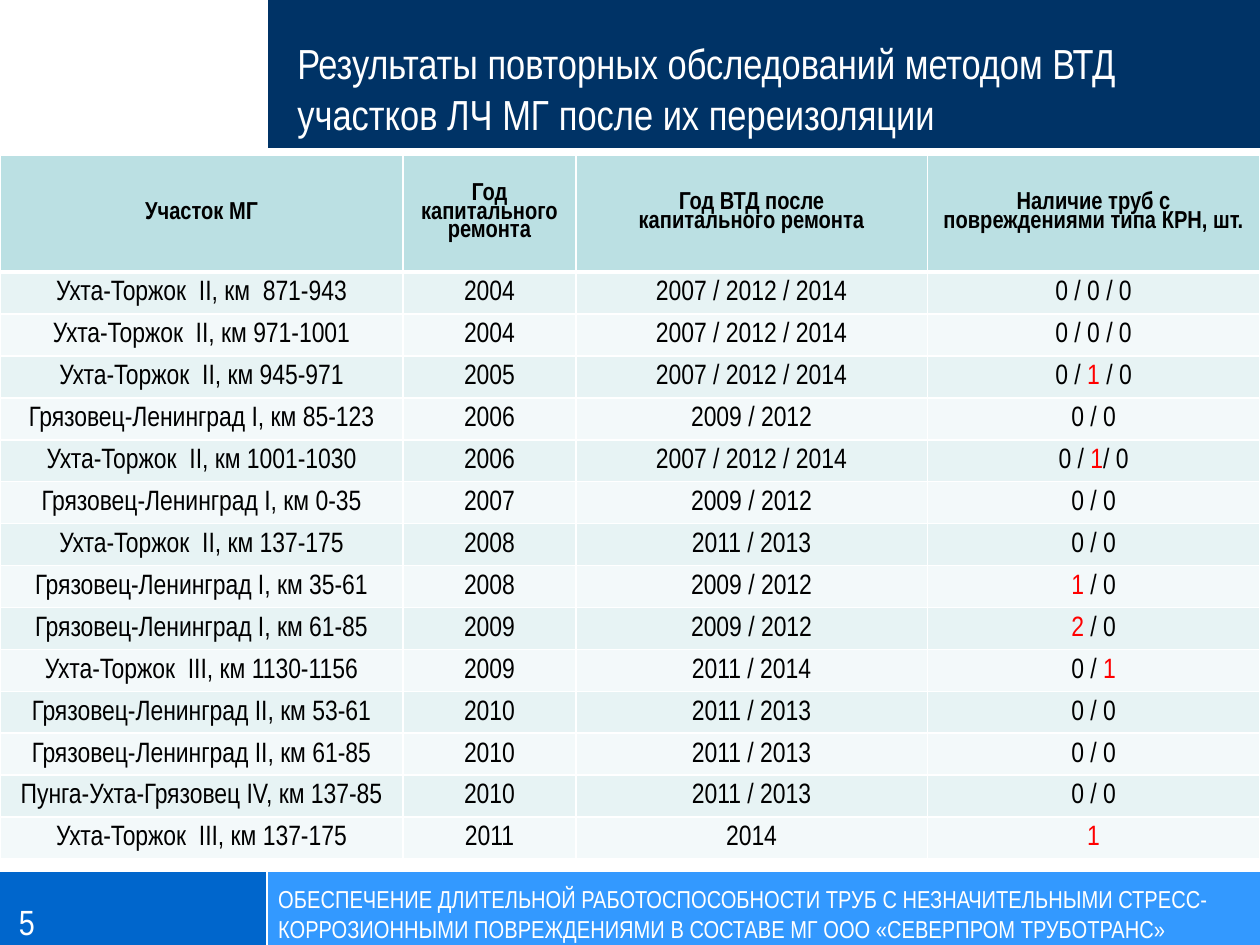
from itertools import groupby

from lxml.etree import SubElement
from pptx import Presentation
from pptx.dml.color import RGBColor
from pptx.enum.shapes import MSO_CONNECTOR, MSO_SHAPE
from pptx.enum.text import MSO_ANCHOR as ANCHOR, MSO_AUTO_SIZE as AUTO_SIZE, PP_ALIGN as ALIGN
from pptx.oxml.ns import qn
from pptx.util import Inches, Pt

WHITE = RGBColor(0xFF, 0xFF, 0xFF)
BLACK = RGBColor(0x00, 0x00, 0x00)
RED = RGBColor(0xFF, 0x00, 0x00)
NAVY = RGBColor(0x00, 0x33, 0x66)
BLUE = RGBColor(0x00, 0x66, 0xCC)
SKY = RGBColor(0x33, 0x99, 0xFF)
TEAL = RGBColor(0xBB, 0xE0, 0xE3)
BANDS = (RGBColor(0xE7, 0xF3, 0xF4), RGBColor(0xF3, 0xF9, 0xFA))

WIDTH, HEIGHT = 10, 7.5
SPLIT = 2.12
HEADER_BOTTOM = 1.18
FOOTER_TOP = 6.91

COLUMN_WIDTHS = (3.2, 1.37, 2.79, 2.64)
HEADER_HEIGHT, ROW_HEIGHT = 0.93, 0.333
HEADINGS = (
    "Участок МГ",
    "Год капитального ремонта",
    "Год ВТД после\nкапитального ремонта",
    "Наличие труб с повреждениями типа КРН, шт.",
)
SECTIONS = (
    ("Ухта-Торжок  II, км  871-943", "2004", "2007 / 2012 / 2014", "0 / 0 / 0"),
    ("Ухта-Торжок  II, км 971-1001", "2004", "2007 / 2012 / 2014", "0 / 0 / 0"),
    ("Ухта-Торжок  II, км 945-971", "2005", "2007 / 2012 / 2014", "0 / 1 / 0"),
    ("Грязовец-Ленинград I, км 85-123", "2006", "2009 / 2012", "0 / 0"),
    ("Ухта-Торжок  II, км 1001-1030", "2006", "2007 / 2012 / 2014", "0 / 1/ 0"),
    ("Грязовец-Ленинград I, км 0-35", "2007", "2009 / 2012", "0 / 0"),
    ("Ухта-Торжок  II, км 137-175", "2008", "2011 / 2013", "0 / 0"),
    ("Грязовец-Ленинград I, км 35-61", "2008", "2009 / 2012", "1 / 0"),
    ("Грязовец-Ленинград I, км 61-85", "2009", "2009 / 2012", "2 / 0"),
    ("Ухта-Торжок  III, км 1130-1156", "2009", "2011 / 2014", "0 / 1"),
    ("Грязовец-Ленинград II, км 53-61", "2010", "2011 / 2013", "0 / 0"),
    ("Грязовец-Ленинград II, км 61-85", "2010", "2011 / 2013", "0 / 0"),
    ("Пунга-Ухта-Грязовец IV, км 137-85", "2010", "2011 / 2013", "0 / 0"),
    ("Ухта-Торжок  III, км 137-175", "2011", "2014", "1"),
)


class SlideBuilder:
    """Holds the text style and the slide being filled."""

    font_name = "Arial Narrow"

    def __init__(self, slide):
        self.slide = slide

    def band(self, left, top, width, height, color):
        band = self.slide.shapes.add_shape(
            MSO_SHAPE.RECTANGLE, *map(Inches, (left, top, width, height)))
        band.shadow.inherit = False
        band.fill.solid()
        band.fill.fore_color.rgb = color
        band.line.fill.background()

    def rule(self, x1, y1, x2, y2):
        rule = self.slide.shapes.add_connector(
            MSO_CONNECTOR.STRAIGHT, *map(Inches, (x1, y1, x2, y2)))
        rule.line.color.rgb = WHITE
        rule.line.width = Pt(1.25)
        SubElement(rule.element.spPr, qn("a:effectLst"))

    def run(self, paragraph, text, size, color, bold=False):
        run = paragraph.add_run()
        run.text = text
        style = {"name": self.font_name, "size": Pt(size), "bold": bold}
        for attribute, value in style.items():
            setattr(run.font, attribute, value)
        run.font.color.rgb = color

    def fill_frame(self, frame, text, size, anchor, inset):
        settings = {
            "word_wrap": True, "auto_size": AUTO_SIZE.NONE, "vertical_anchor": anchor,
            "margin_left": Inches(inset), "margin_right": Inches(inset),
            "margin_top": Inches(inset / 2), "margin_bottom": Inches(inset / 2),
        }
        for attribute, value in settings.items():
            setattr(frame, attribute, value)
        paragraph = frame.paragraphs[0]
        paragraph.alignment = ALIGN.LEFT
        self.run(paragraph, text, size, WHITE)

    def title(self, left, top, width, height, text):
        title = self.slide.shapes.title
        title.left, title.top, title.width, title.height = map(
            Inches, (left, top, width, height))
        self.fill_frame(title.text_frame, text, 24, ANCHOR.BOTTOM, 0)
        # Bring the title in front of the bands
        title.element.getparent().append(title.element)

    def label(self, left, top, width, height, text, size, anchor, inset):
        box = self.slide.shapes.add_textbox(*map(Inches, (left, top, width, height)))
        self.fill_frame(box.text_frame, text, size, anchor, inset)

    def cell(self, cell, fill, margins, top_border=1, bottom_border=1):
        borders = {"lnL": 1, "lnR": 1, "lnT": top_border, "lnB": bottom_border}
        properties = cell._tc.get_or_add_tcPr()
        for side, points in borders.items():
            border = SubElement(properties, qn(f"a:{side}"), w=str(Pt(points)))
            solid = SubElement(border, qn("a:solidFill"))
            SubElement(solid, qn("a:srgbClr"), val=str(WHITE))
        cell.fill.solid()
        cell.fill.fore_color.rgb = fill
        cell.vertical_anchor = ANCHOR.MIDDLE
        for side, margin in zip(("left", "top", "right", "bottom"), margins):
            setattr(cell, f"margin_{side}", Inches(margin))
        paragraph = cell.text_frame.paragraphs[0]
        paragraph.alignment = ALIGN.CENTER
        return paragraph

    def table(self, left, top, headings, rows):
        height = HEADER_HEIGHT + ROW_HEIGHT * len(rows)
        table = self.slide.shapes.add_table(
            len(rows) + 1, len(headings),
            *map(Inches, (left, top, sum(COLUMN_WIDTHS), height))).table
        for column, width in zip(table.columns, COLUMN_WIDTHS):
            column.width = Inches(width)
        for index, row in enumerate(table.rows):
            row.height = Inches(ROW_HEIGHT if index else HEADER_HEIGHT)

        # Headings
        for column, heading in enumerate(headings):
            paragraph = self.cell(table.cell(0, column), TEAL,
                                  (0.1, 0.05, 0.1, 0.05), bottom_border=3)
            paragraph.line_spacing = 0.8
            for number, line in enumerate(heading.split("\n")):
                if number:
                    paragraph.add_line_break()
                self.run(paragraph, line, 14, BLACK, bold=True)

        # Pipeline sections; damaged pipe counts other than zero are red
        for index, values in enumerate(rows):
            for column, value in enumerate(values):
                paragraph = self.cell(
                    table.cell(index + 1, column), BANDS[index % 2],
                    (0.01, 0.01, 0.01, 0), top_border=1 if index else 3)
                if column < len(values) - 1:
                    self.run(paragraph, value, 16, BLACK)
                    continue
                for damaged, part in groupby(value, lambda sign: sign in "123456789"):
                    self.run(paragraph, "".join(part), 16, RED if damaged else BLACK)


def main():
    presentation = Presentation()
    presentation.slide_width, presentation.slide_height = Inches(WIDTH), Inches(HEIGHT)
    builder = SlideBuilder(presentation.slides.add_slide(presentation.slide_layouts[5]))

    # Header and footer bands
    footer_height = HEIGHT - FOOTER_TOP
    builder.band(0, FOOTER_TOP, SPLIT, footer_height, BLUE)
    builder.band(SPLIT, FOOTER_TOP, WIDTH - SPLIT, footer_height, SKY)
    builder.band(SPLIT, 0, WIDTH - SPLIT, HEADER_BOTTOM, NAVY)
    builder.rule(SPLIT, FOOTER_TOP, SPLIT, HEIGHT)
    builder.rule(SPLIT, 0, SPLIT, HEADER_BOTTOM)
    for y in (FOOTER_TOP, HEADER_BOTTOM):
        builder.rule(0, y, WIDTH, y)

    # Title, footer text, survey results and slide number
    builder.title(2.36, 0, 7.64, 1.1,
                  "Результаты повторных обследований методом ВТД "
                  "участков ЛЧ МГ после их переизоляции")
    builder.label(2.11, 6.97, 7.89, 0.57,
                  "ОБЕСПЕЧЕНИЕ ДЛИТЕЛЬНОЙ РАБОТОСПОСОБНОСТИ ТРУБ С НЕЗНАЧИТЕЛЬНЫМИ "
                  "СТРЕСС-КОРРОЗИОННЫМИ ПОВРЕЖДЕНИЯМИ В СОСТАВЕ МГ "
                  "ООО «СЕВЕРПРОМ ТРУБОТРАНС»", 14, ANCHOR.TOP, 0.1)
    builder.table(0, 1.23, HEADINGS, SECTIONS)
    builder.label(0.15, 6.96, 1.96, 0.52, "5", 20, ANCHOR.BOTTOM, 0)

    presentation.save("out.pptx")


if __name__ == "__main__":
    main()
